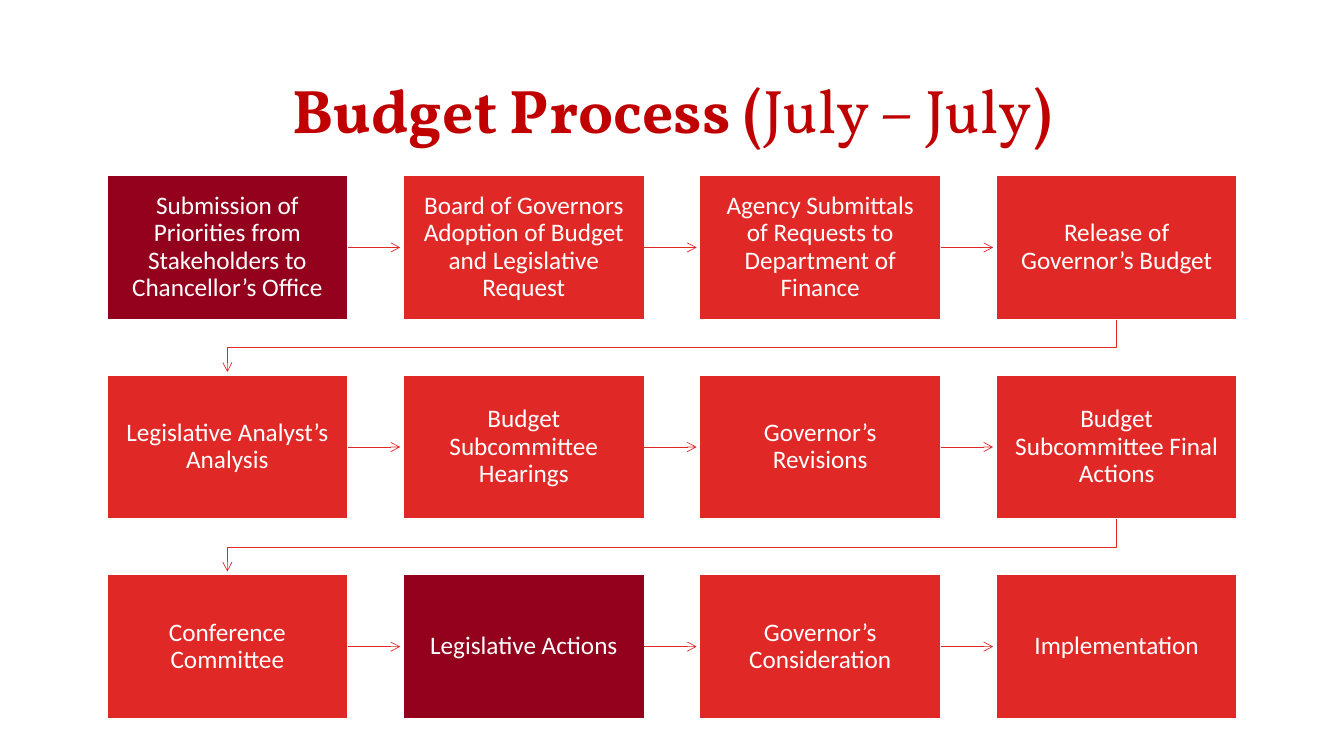
from lxml import etree
from pptx import Presentation
from pptx.dml.color import RGBColor
from pptx.enum.shapes import MSO_CONNECTOR, MSO_SHAPE
from pptx.enum.text import MSO_ANCHOR, PP_ALIGN
from pptx.oxml.ns import qn
from pptx.util import Inches, Pt

RECTANGLE = MSO_SHAPE.RECTANGLE
STRAIGHT = MSO_CONNECTOR.STRAIGHT
MIDDLE = MSO_ANCHOR.MIDDLE
CENTER = PP_ALIGN.CENTER
RIGHT_SIDE = 3

COLORS = {"title": "C00000", "step": "E02826", "key": "93011D", "white": "FFFFFF"}
TITLE_FONT = "Vollkorn"
STEP_FONT = "Calibri"

LEFT, TOP = 1.06, 1.74
BOX_WIDTH, BOX_HEIGHT = 2.39, 1.43
COLUMN_PITCH, ROW_PITCH = 2.94, 1.98
ARROW_GAP = 0.03
PADDING = 0.14

TITLE_RUNS = [("Budget Process (", True), ("July – July", False), (")", True)]
STEPS = [
    [
        "Submission of Priorities from Stakeholders to Chancellor’s Office",
        "Board of Governors Adoption of Budget and Legislative Request",
        "Agency Submittals of Requests to Department of Finance",
        "Release of Governor’s Budget",
    ],
    [
        "Legislative Analyst’s Analysis",
        "Budget Subcommittee Hearings",
        "Governor’s Revisions",
        "Budget Subcommittee Final Actions",
    ],
    [
        "Conference Committee",
        "Legislative Actions",
        "Governor’s Consideration",
        "Implementation",
    ],
]
KEY_STEPS = {(0, 0), (2, 1)}


def color(name):
    """Return the named colour."""
    return RGBColor.from_string(COLORS[name])


def format_span(span, font, size, color_name, bold=False):
    """Set the font of one run."""
    span.font.name = font
    span.font.size = Pt(size)
    span.font.color.rgb = color(color_name)
    span.font.bold = bold


def set_title(page):
    """Place and fill the title."""
    title = page.shapes.title
    title.left, title.top = Inches(0.92), Inches(0.4)
    title.width, title.height = Inches(11.5), Inches(1.45)
    title.text_frame.vertical_anchor = MIDDLE
    para = title.text_frame.paragraphs[0]
    para.alignment = CENTER
    para.line_spacing = 0.9
    for text, bold in TITLE_RUNS:
        span = para.add_run()
        span.text = text
        format_span(span, TITLE_FONT, 44, "title", bold)


def add_step(page, row, column, text):
    """Add the box of one step in its grid cell."""
    box = page.shapes.add_shape(
        RECTANGLE,
        Inches(LEFT + column * COLUMN_PITCH),
        Inches(TOP + row * ROW_PITCH),
        Inches(BOX_WIDTH),
        Inches(BOX_HEIGHT),
    )
    box.shadow.inherit = False
    box.fill.solid()
    box.fill.fore_color.rgb = color("key" if (row, column) in KEY_STEPS else "step")
    box.line.color.rgb = color("white")
    box.line.width = Pt(1)
    frame = box.text_frame
    frame.word_wrap = True
    frame.vertical_anchor = MIDDLE
    frame.margin_left = frame.margin_right = Inches(PADDING)
    frame.margin_top = frame.margin_bottom = Inches(PADDING)
    frame.text = text
    para = frame.paragraphs[0]
    para.alignment = CENTER
    para.line_spacing = 0.9
    format_span(para.runs[0], STEP_FONT, 18, "white")
    return box


def style_arrow(arrow):
    """Give a line its colour, an open arrowhead and no shadow."""
    arrow.line.color.rgb = color("step")
    arrow.line.width = Pt(0.5)
    properties = arrow.element.spPr
    etree.SubElement(properties.find(qn("a:ln")), qn("a:tailEnd"), type="arrow")
    etree.SubElement(properties, qn("a:effectLst"))


def add_step_arrow(page, box):
    """Add the arrow from a box to the next one in its row."""
    right = box.left + box.width
    middle = box.top + box.height // 2
    end = box.left + Inches(COLUMN_PITCH - ARROW_GAP)
    arrow = page.shapes.add_connector(STRAIGHT, right, middle, end, middle)
    arrow.begin_connect(box, RIGHT_SIDE)
    style_arrow(arrow)


def add_row_arrow(page, last_box, first_box):
    """Add the bent arrow from the end of a row to the start of the next."""
    start_x = last_box.left + last_box.width // 2
    end_x = first_box.left + first_box.width // 2
    bottom = last_box.top + last_box.height
    end_y = last_box.top + Inches(ROW_PITCH - ARROW_GAP)
    turn_y = bottom + Inches(0.28)
    builder = page.shapes.build_freeform(start_x, bottom)
    builder.add_line_segments(
        [(start_x, turn_y), (end_x, turn_y), (end_x, end_y)], close=False
    )
    arrow = builder.convert_to_shape()
    arrow.fill.background()
    style_arrow(arrow)


def main():
    """Build and save the slide."""
    deck = Presentation()
    deck.slide_width, deck.slide_height = Inches(13.33), Inches(7.5)
    page = deck.slides.add_slide(deck.slide_layouts[5])
    set_title(page)
    rows = [
        [add_step(page, row, column, text) for column, text in enumerate(texts)]
        for row, texts in enumerate(STEPS)
    ]
    for boxes in rows:
        for box in boxes[:-1]:
            add_step_arrow(page, box)
    for boxes, next_boxes in zip(rows, rows[1:]):
        add_row_arrow(page, boxes[-1], next_boxes[0])
    deck.save("out.pptx")


if __name__ == "__main__":
    main()
